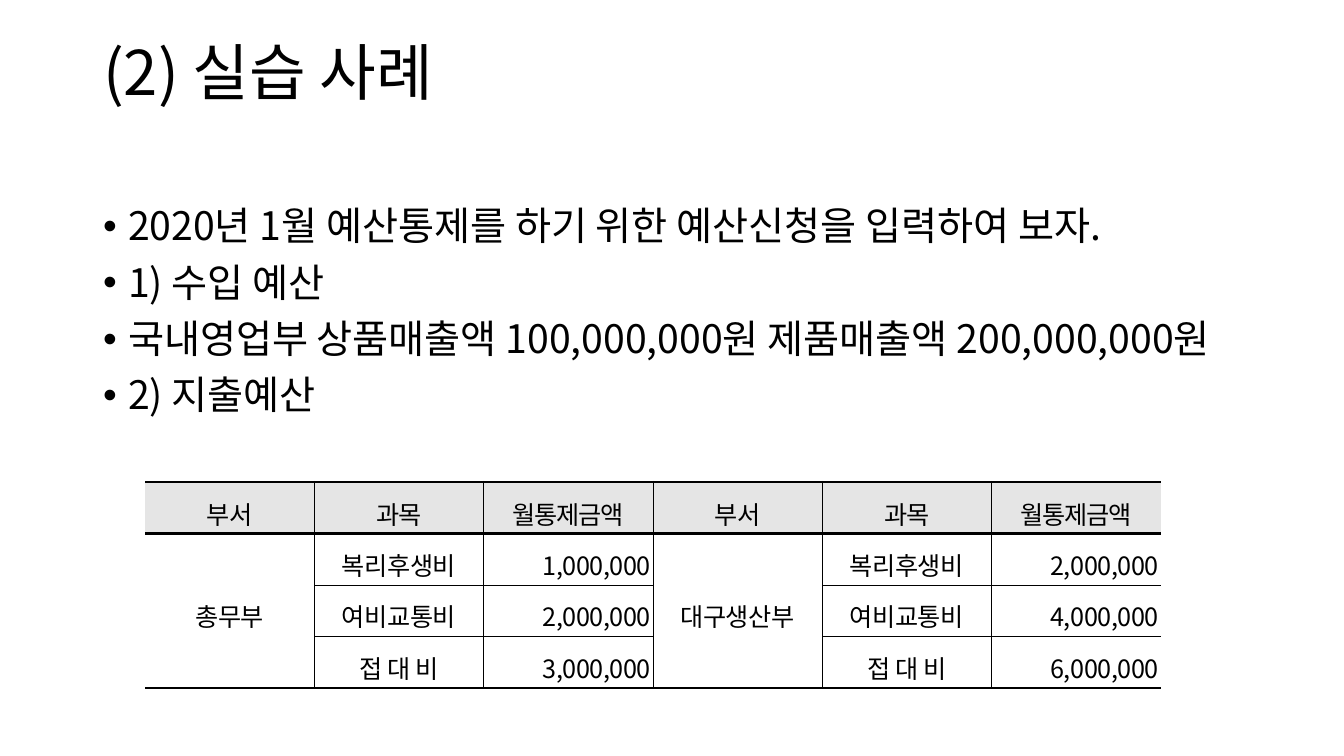
from lxml.etree import SubElement
from pptx import Presentation
from pptx.dml.color import RGBColor
from pptx.enum.text import MSO_ANCHOR, MSO_AUTO_SIZE, PP_ALIGN
from pptx.oxml.ns import qn
from pptx.util import Pt

# Content
TITLE = "(2) 실습 사례"
BODY = [
    "2020년 1월 예산통제를 하기 위한 예산신청을 입력하여 보자.",
    "1) 수입 예산",
    "국내영업부 상품매출액 100,000,000원 제품매출액 200,000,000원",
    "2) 지출예산",
]
HEAD = ["부서", "과목", "월통제금액"]
DEPTS = [
    ("총무부", ["1,000,000", "2,000,000", "3,000,000"]),
    ("대구생산부", ["2,000,000", "4,000,000", "6,000,000"]),
]
ITEMS = ["복리후생비", "여비교통비", "접 대 비"]

# Look
FONT = "Noto Sans CJK KR"
COLORS = {"ink": "000000", "head": "E5E5E5"}
THIN, EDGE, RULE = 0.28, 1.7, 1.98
SCALE = 914400 / 100.8


def px(n):
    return round(n * SCALE)


def write(para, text, size, align=PP_ALIGN.LEFT, line=0.9, before=0, track=0):
    para.alignment = align
    para.line_spacing = line
    para.space_before = Pt(before)
    run = para.add_run()
    run.text = text
    font = run.font
    font.size = Pt(size)
    font.name = FONT
    font.color.rgb = RGBColor.from_string(COLORS["ink"])
    props = font._element
    SubElement(props, qn("a:ea")).set("typeface", FONT)
    if track:
        props.set("spc", str(round(track * 100)))


def place(shape, left, top, width, height):
    shape.left, shape.top = px(left), px(top)
    shape.width, shape.height = px(width), px(height)
    shape.text_frame.auto_size = MSO_AUTO_SIZE.NONE
    return shape.text_frame


def border(cell, widths):
    props = cell._tc.get_or_add_tcPr()
    for side, width in zip("LRTB", widths):
        line = SubElement(props, qn(f"a:ln{side}"))
        if not width:
            line.set("w", "0")
            SubElement(line, qn("a:noFill"))
            continue
        line.set("w", str(Pt(width)))
        fill = SubElement(line, qn("a:solidFill"))
        SubElement(fill, qn("a:srgbClr")).set("val", COLORS["ink"])


deck = Presentation()
deck.slide_width, deck.slide_height = px(1344), px(756)
slide = deck.slides.add_slide(deck.slide_layouts[1])

# Title, held in the upper part of its box
frame = place(slide.shapes.title, 93, 40, 1159, 146)
frame.vertical_anchor = MSO_ANCHOR.MIDDLE
frame.margin_bottom = px(80)
write(frame.paragraphs[0], TITLE, 44)

# Bulleted list
frame = place(slide.placeholders[1], 93, 202, 1159, 480)
for i, text in enumerate(BODY):
    para = frame.add_paragraph() if i else frame.paragraphs[0]
    write(para, text, 28, before=10)
    props = para._p.get_or_add_pPr()
    props.set("marL", str(px(25)))
    props.set("indent", str(-px(25)))

# Budget table: one group of three columns per department
rows = [HEAD * len(DEPTS)]
for i, item in enumerate(ITEMS):
    row = []
    for dept, sums in DEPTS:
        row += ["" if i else dept, item, sums[i]]
    rows.append(row)

last, wide = len(rows) - 1, len(rows[0])
table = slide.shapes.add_table(
    len(rows), wide, px(145), px(482), px(1016), px(186)).table
for col in table.columns:
    col.width = px(1016) // wide
for r, row in enumerate(rows):
    table.rows[r].height = px(46 if r else 48)
    for c, text in enumerate(row):
        cell = table.cell(r, c)
        kind = c % len(HEAD)
        merged = r > 0 and kind == 0
        top = {0: EDGE, 1: RULE}.get(r, 0 if merged else THIN)
        low = RULE if r == 0 else EDGE if r == last or merged and r == 1 \
            else 0 if merged else THIN
        border(cell, (THIN if c else 0, THIN if c < wide - 1 else 0, top, low))
        if r:
            cell.fill.background()
        else:
            cell.fill.solid()
            cell.fill.fore_color.rgb = RGBColor.from_string(COLORS["head"])
        cell.margin_left = cell.margin_right = px(2)
        cell.margin_top = cell.margin_bottom = px(2)
        cell.vertical_anchor = MSO_ANCHOR.MIDDLE
        if text:
            align = PP_ALIGN.RIGHT if r and kind == 2 else PP_ALIGN.CENTER
            write(cell.text_frame.paragraphs[0], text, 18, align=align,
                  line=1.3, track=-0.3 if r else -0.7)
for c in range(0, wide, len(HEAD)):
    table.cell(1, c).merge(table.cell(last, c))

deck.save("out.pptx")
